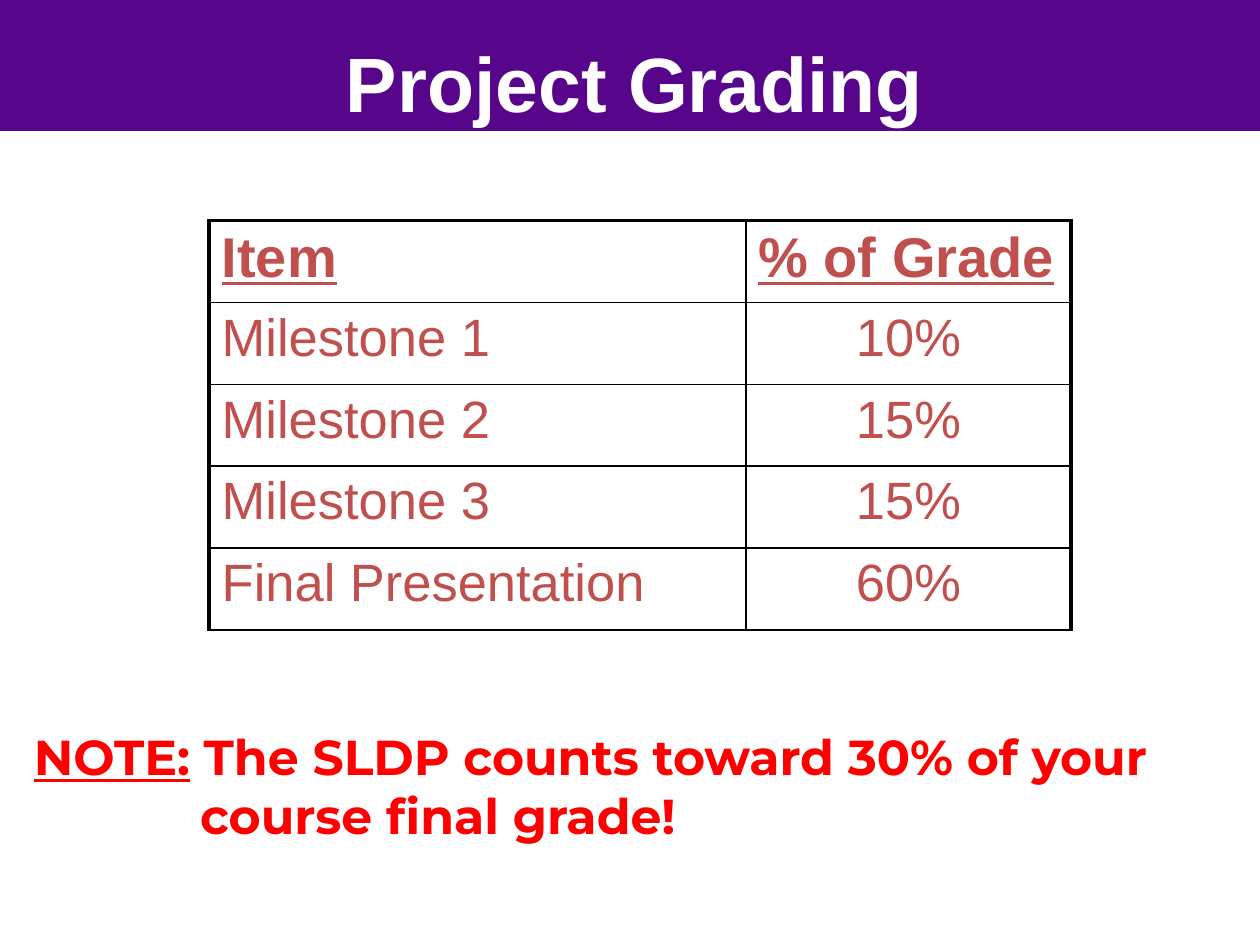
from lxml.etree import SubElement, Element
from pptx import Presentation
from pptx.dml.color import RGBColor
from pptx.enum.shapes import MSO_SHAPE as Preset
from pptx.enum.text import MSO_ANCHOR as Anchor, PP_ALIGN as Align
from pptx.oxml.ns import qn
from pptx.util import Inches, Pt

WIDTH, HEIGHT = 10, 7.5
COLORS = {
    "banner": "57068C",
    "title": "FFFFFF",
    "grade": "C0504D",
    "note": "FF0000",
    "border": "000000",
}
GRADES = [
    ("Item", "% of Grade"),
    ("Milestone 1", "10%"),
    ("Milestone 2", "15%"),
    ("Milestone 3", "15%"),
    ("Final Presentation", "60%"),
]
COLUMN_WIDTHS = (4.26, 2.58)
ROW_HEIGHT = 0.65
THIN, THICK = 1, 2.25


def style_font(font, name, size, color, bold=False, underline=False):
    font.name = name
    font.size = Pt(size)
    font.bold = bold
    font.underline = underline
    font.color.rgb = RGBColor.from_string(COLORS[color])


def add_banner(slide):
    banner = slide.shapes.add_shape(Preset.RECTANGLE, 0, 0, Inches(WIDTH), Inches(1.04))
    banner.shadow.inherit = False
    banner.fill.solid()
    banner.fill.fore_color.rgb = RGBColor.from_string(COLORS["banner"])
    banner.line.fill.background()


def add_text_frame(slide, left, top, width, height, anchor):
    box = slide.shapes.add_textbox(*map(Inches, (left, top, width, height)))
    text_frame = box.text_frame
    text_frame.word_wrap = True
    text_frame.vertical_anchor = anchor
    return text_frame


def add_title(slide):
    text_frame = add_text_frame(slide, 0.54, 0.17, 9, 1.25, Anchor.TOP)
    text_frame.margin_top = Inches(0.11)
    text_frame.text = "Project Grading"
    paragraph = text_frame.paragraphs[0]
    paragraph.alignment = Align.CENTER
    style_font(paragraph.runs[0].font, "Arial", 44, "title", bold=True)


def set_borders(cell, widths):
    properties = cell._tc.get_or_add_tcPr()
    for position, (side, width) in enumerate(widths.items()):
        line = Element(qn(f"a:ln{side}"), w=str(Pt(width)))
        fill = SubElement(line, qn("a:solidFill"))
        SubElement(fill, qn("a:srgbClr"), val=COLORS["border"])
        properties.insert(position, line)


def add_grade_table(slide):
    rows, columns = len(GRADES), len(COLUMN_WIDTHS)
    table = slide.shapes.add_table(
        rows, columns, Inches(1.66), Inches(1.75),
        Inches(sum(COLUMN_WIDTHS)), Inches(rows * ROW_HEIGHT),
    ).table
    table.first_row = False
    table.horz_banding = False
    for column, width in zip(table.columns, COLUMN_WIDTHS):
        column.width = Inches(width)
    for row_index, values in enumerate(GRADES):
        table.rows[row_index].height = Inches(ROW_HEIGHT)
        header = row_index == 0
        for column_index, value in enumerate(values):
            last = column_index == columns - 1
            cell = table.cell(row_index, column_index)
            cell.fill.background()
            cell.text_frame.text = value
            paragraph = cell.text_frame.paragraphs[0]
            paragraph.alignment = Align.CENTER if last and not header else Align.LEFT
            style_font(paragraph.runs[0].font, "Arial", 32 if header else 30, "grade", header, header)
            set_borders(cell, {
                "L": THIN if column_index else THICK,
                "R": THICK if last else THIN,
                "T": THICK if header else THIN,
                "B": THIN,
            })


def add_note(slide):
    text_frame = add_text_frame(slide, 0.17, 5.67, 9.75, 1.08, Anchor.BOTTOM)
    first = text_frame.paragraphs[0]
    second = text_frame.add_paragraph()
    first.add_run().text = "NOTE:"
    first.add_run().text = " The SLDP counts toward 30% of your"
    second.text = "course final grade!"
    second._p.get_or_add_pPr().set("marL", str(Inches(1.32)))
    for run in first.runs + second.runs:
        style_font(run.font, "Montserrat", 28, "note", bold=True)
    first.runs[0].font.underline = True


def main():
    presentation = Presentation()
    presentation.slide_width = Inches(WIDTH)
    presentation.slide_height = Inches(HEIGHT)
    slide = presentation.slides.add_slide(presentation.slide_layouts[6])
    add_banner(slide)
    add_title(slide)
    add_grade_table(slide)
    add_note(slide)
    presentation.save("out.pptx")


if __name__ == "__main__":
    main()
